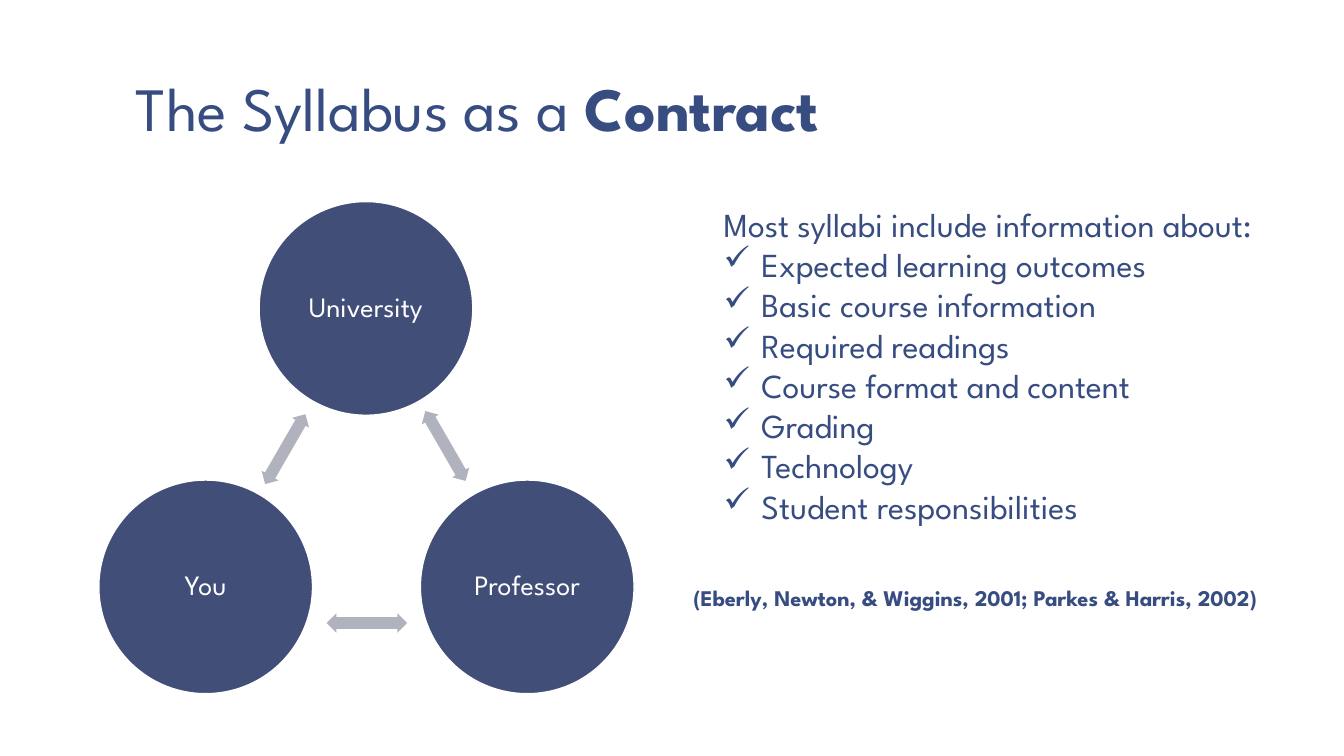
"""Builds the slide that presents the syllabus as a contract."""
from dataclasses import dataclass

from lxml import etree
from pptx import Presentation
from pptx.dml.color import RGBColor
from pptx.enum import shapes, text
from pptx.oxml.ns import qn
from pptx.util import Pt


@dataclass(frozen=True)
class Theme:
    font: str = "League Spartan"
    ink: str = "374C81"
    circle: str = "414E77"
    arrow: str = "B0B2BD"
    white: str = "FFFFFF"
    title: int = 44
    body: int = 24
    label: int = 20
    citation: int = 16


THEME = Theme()
DIAMETER = 152.64
ARROW_WIDTH, ARROW_HEIGHT = 57.6, 14
BULLET_INDENT = 27
PARTIES = [("University", 261.4, 220.3), ("Professor", 376.6, 419.2), ("You", 146.9, 419.2)]
ARROWS = [(318.2, 318.6, 60), (262.1, 445, 0), (203.8, 320.8, 300)]
TOPICS = [
    "Expected learning outcomes",
    "Basic course information",
    "Required readings",
    "Course format and content",
    "Grading",
    "Technology",
    "Student responsibilities",
]


def style(font, size, color=THEME.ink, bold=False):
    font.name = THEME.font
    font.size = Pt(size)
    font.bold = bold
    font.color.rgb = RGBColor.from_string(color)


def add_text(page, left, top, width, height):
    box = page.shapes.add_textbox(Pt(left), Pt(top), Pt(width), Pt(height))
    box.text_frame.word_wrap = True
    return box.text_frame


def add_centred_shape(page, kind, x, y, width, height, color):
    shape = page.shapes.add_shape(
        kind, Pt(x - width / 2), Pt(y - height / 2), Pt(width), Pt(height))
    shape.shadow.inherit = False
    shape.fill.solid()
    shape.fill.fore_color.rgb = RGBColor.from_string(color)
    shape.line.fill.background()
    return shape


def add_title(page):
    frame = add_text(page, 87.8, -2.2, 800, 110.2)
    frame.vertical_anchor = text.MSO_ANCHOR.BOTTOM
    frame.margin_left = frame.margin_right = Pt(9.36)
    frame.margin_top = frame.margin_bottom = Pt(5)
    para = frame.paragraphs[0]
    para.line_spacing = 0.85
    for words, bold in (("The Syllabus as a ", False), ("Contract", True)):
        span = para.add_run()
        span.text = words
        style(span.font, THEME.title, bold=bold)


def add_party(page, name, x, y):
    circle = add_centred_shape(
        page, shapes.MSO_SHAPE.OVAL, x, y, DIAMETER, DIAMETER, THEME.circle)
    circle.line.color.rgb = RGBColor.from_string(THEME.white)
    circle.line.width = Pt(1)
    frame = circle.text_frame
    frame.margin_left = frame.margin_right = Pt(2)
    frame.margin_top = frame.margin_bottom = Pt(2)
    frame.vertical_anchor = text.MSO_ANCHOR.MIDDLE
    frame.text = name
    para = frame.paragraphs[0]
    para.alignment = text.PP_ALIGN.CENTER
    para.line_spacing = 0.9
    style(para.runs[0].font, THEME.label, THEME.white)


def add_arrow(page, x, y, angle):
    arrow = add_centred_shape(
        page, shapes.MSO_SHAPE.LEFT_RIGHT_ARROW, x, y,
        ARROW_WIDTH, ARROW_HEIGHT, THEME.arrow)
    arrow.adjustments[0] = 0.6
    arrow.rotation = angle


def add_check_mark(para):
    properties = para._p.get_or_add_pPr()
    properties.set("marL", str(Pt(BULLET_INDENT)))
    properties.set("indent", str(-Pt(BULLET_INDENT)))
    etree.SubElement(properties, qn("a:buChar")).set("char", "✓")


def add_topics(page):
    frame = add_text(page, 509.8, 141.8, 401.8, 356.4)
    frame.text = "Most syllabi include information about:"
    style(frame.paragraphs[0].runs[0].font, THEME.body)
    for topic in TOPICS:
        para = frame.add_paragraph()
        para.text = topic
        add_check_mark(para)
        style(para.runs[0].font, THEME.body)


def add_citation(page):
    frame = add_text(page, 488.2, 414, 491.8, 26.6)
    frame.text = "(Eberly, Newton, & Wiggins, 2001; Parkes & Harris, 2002)"
    style(frame.paragraphs[0].runs[0].font, THEME.citation, bold=True)


def main():
    deck = Presentation()
    deck.slide_width, deck.slide_height = Pt(960), Pt(540)
    page = deck.slides.add_slide(deck.slide_layouts[6])
    add_title(page)
    for party in PARTIES:
        add_party(page, *party)
    for arrow in ARROWS:
        add_arrow(page, *arrow)
    add_topics(page)
    add_citation(page)
    deck.save("out.pptx")


if __name__ == "__main__":
    main()
